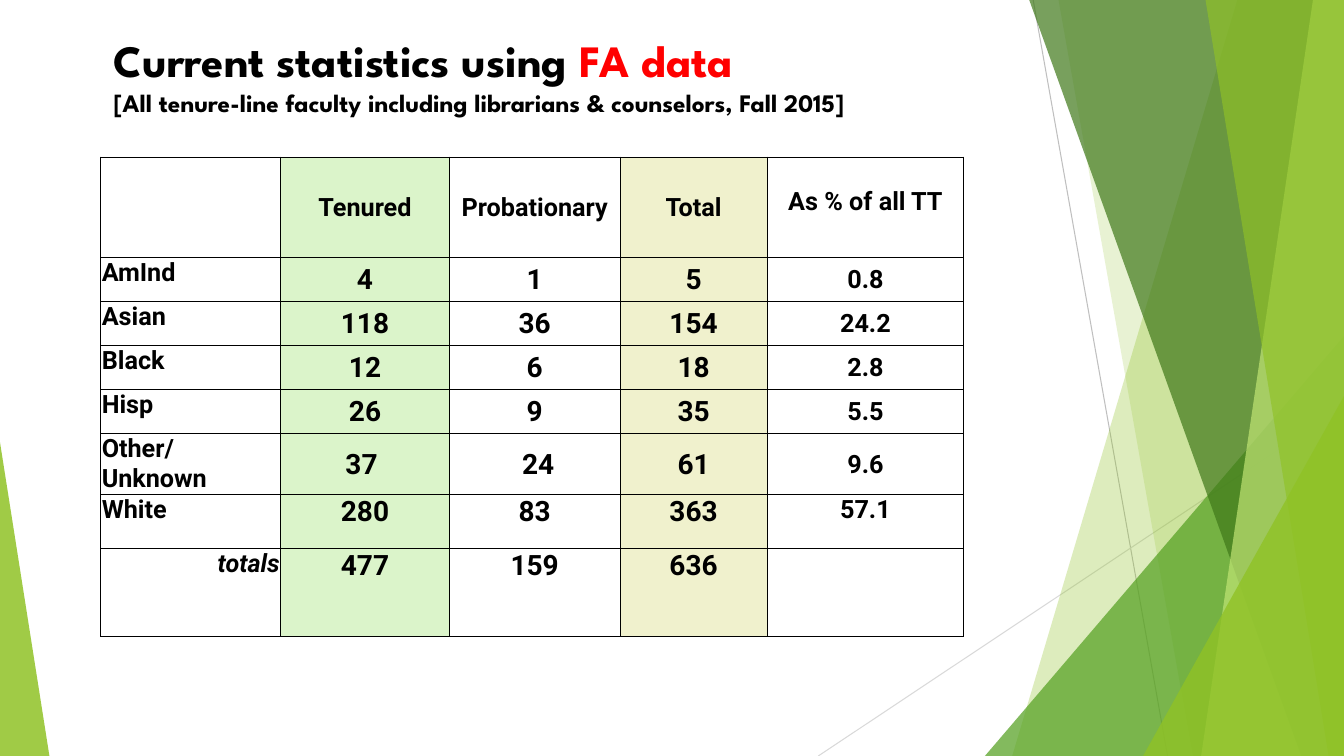
import pptx
import pptx.dml.color
import pptx.enum.shapes
import pptx.enum.text
import pptx.oxml
import pptx.oxml.ns
import pptx.util

Pt = pptx.util.Pt
RGBColor = pptx.dml.color.RGBColor
PP_ALIGN = pptx.enum.text.PP_ALIGN
ANCHOR = pptx.enum.text.MSO_ANCHOR
qn = pptx.oxml.ns.qn

BLACK = RGBColor(0x00, 0x00, 0x00)
RED = RGBColor(0xFF, 0x00, 0x00)
LIME = RGBColor(0x90, 0xC2, 0x26)
PALE_LIME = RGBColor(0xC0, 0xE4, 0x74)
GREEN = RGBColor(0x54, 0xA0, 0x21)
DARK_GREEN = RGBColor(0x3F, 0x78, 0x19)
GREY = RGBColor(0xBF, 0xBF, 0xBF)
LIGHT_GREY = RGBColor(0xD9, 0xD9, 0xD9)
TENURED_FILL = RGBColor(0xDB, 0xF4, 0xCA)
TOTAL_FILL = RGBColor(0xF0, 0xF1, 0xCD)

SLIDE_WIDTH, SLIDE_HEIGHT = 960, 540
COLUMN_WIDTHS = [128.5, 120.5, 122, 105, 140.5]
ROW_HEIGHTS = [71.5] + [31.5] * 4 + [43.5, 38.5, 63]
COLUMN_FILLS = {1: TENURED_FILL, 3: TOTAL_FILL}
STATISTICS = [
    ["", "Tenured", "Probationary", "Total", "As % of all TT"],
    ["AmInd", "4", "1", "5", "0.8"],
    ["Asian", "118", "36", "154", "24.2"],
    ["Black", "12", "6", "18", "2.8"],
    ["Hisp", "26", "9", "35", "5.5"],
    ["Other/\nUnknown", "37 ", " 24", "61", "9.6"],
    ["White", "280", "83", "363", "57.1"],
    ["totals", "477", "159", "636", ""],
]


def style_run(run, font, size, color=BLACK):
    """Give a run its bold typeface, size and colour."""
    run.font.name = font
    run.font.size = Pt(size)
    run.font.bold = True
    run.font.color.rgb = color


def paint(shape, color, opacity):
    """Fill a facet with a translucent colour and no outline."""
    shape.shadow.inherit = False
    shape.fill.solid()
    shape.fill.fore_color.rgb = color
    shape.line.fill.background()
    tint = shape._element.spPr.find(".//" + qn("a:srgbClr"))
    pptx.oxml.ns.nsdecls("a")
    alpha = tint.makeelement(qn("a:alpha"), {"val": str(opacity * 1000)})
    tint.append(alpha)


def add_ray(slide, start, end, color):
    """Draw a thin line across the background."""
    ray = slide.shapes.add_connector(
        pptx.enum.shapes.MSO_CONNECTOR.STRAIGHT, *map(Pt, start + end))
    ray.line.color.rgb = color
    ray.line.width = Pt(0.75)
    properties = ray._element.spPr
    properties.append(properties.makeelement(qn("a:effectLst"), {}))


def add_band(slide, top_left, bottom_left, color, opacity):
    """Draw a full-height facet reaching the right edge of the slide."""
    builder = slide.shapes.build_freeform(Pt(top_left), Pt(-0.6))
    builder.add_line_segments([
        (Pt(SLIDE_WIDTH), Pt(-0.6)),
        (Pt(SLIDE_WIDTH), Pt(SLIDE_HEIGHT)),
        (Pt(bottom_left), Pt(SLIDE_HEIGHT)),
    ])
    paint(builder.convert_to_shape(), color, opacity)


def add_corner(slide, left, top, width, apex, color, opacity):
    """Draw a triangle standing on the bottom edge of the slide."""
    corner = slide.shapes.add_shape(
        pptx.enum.shapes.MSO_SHAPE.ISOSCELES_TRIANGLE,
        Pt(left), Pt(top), Pt(width), Pt(SLIDE_HEIGHT - top))
    corner.adjustments[0] = apex
    paint(corner, color, opacity)


def add_facets(slide):
    """Build the green background facets from back to front."""
    add_ray(slide, (738, 0), (834, 540), GREY)
    add_ray(slide, (960, 290), (584.5, 540), LIGHT_GREY)
    add_band(slide, 884, 723, LIME, 30)
    add_band(slide, 756, 852, LIME, 20)
    add_corner(slide, 703.5, 240, 256.5, 1, GREEN, 72)
    add_band(slide, 735, 929.5, DARK_GREEN, 70)
    add_band(slide, 938, 858, PALE_LIME, 70)
    add_band(slide, 861, 949, LIME, 65)
    add_corner(slide, 816.5, 283, 143.5, 1, LIME, 80)
    add_corner(slide, 0, 316, 35.3, 0, LIME, 85)


def add_heading(slide, left, top, width, height):
    """Fill the title placeholder with the heading and its scope."""
    heading = slide.shapes.title
    heading.left, heading.top = Pt(left), Pt(top)
    heading.width, heading.height = Pt(width), Pt(height)
    frame = heading.text_frame
    frame.word_wrap = True
    frame.vertical_anchor = ANCHOR.BOTTOM
    frame.margin_left = frame.margin_right = Pt(7.2)
    frame.margin_top, frame.margin_bottom = 0, Pt(43)
    line = frame.paragraphs[0]
    line.alignment = PP_ALIGN.LEFT
    line.text = "Current statistics using "
    style_run(line.runs[0], "League Spartan", 32)
    source = line.add_run()
    source.text = "FA data"
    style_run(source, "League Spartan", 32, RED)
    line.add_line_break()
    scope = line.add_run()
    scope.text = "[All tenure-line faculty including librarians & counselors, Fall 2015]"
    style_run(scope, "League Spartan", 18)


def add_borders(cell):
    """Outline a cell with thin black rules."""
    for side in ("lnL", "lnR", "lnT", "lnB"):
        cell._tc.get_or_add_tcPr().append(pptx.oxml.parse_xml(
            f'<a:{side} {pptx.oxml.ns.nsdecls("a")} w="12700"><a:solidFill>'
            f'<a:srgbClr val="{BLACK}"/></a:solidFill></a:{side}>'))


def fill_cell(cell, row, column, value):
    """Write and format one cell of the statistics."""
    last_row, last_column = len(ROW_HEIGHTS) - 1, len(COLUMN_WIDTHS) - 1
    percent_heading = row == 0 and column == last_column
    add_borders(cell)
    if column in COLUMN_FILLS:
        cell.fill.solid()
        cell.fill.fore_color.rgb = COLUMN_FILLS[column]
    else:
        cell.fill.background()
    cell.margin_left = cell.margin_right = Pt(0.7)
    cell.margin_top = Pt(21.5 if percent_heading else 0.7)
    cell.margin_bottom = 0
    at_top = column == 0 or row >= last_row - 1 or percent_heading
    cell.vertical_anchor = ANCHOR.TOP if at_top else ANCHOR.MIDDLE
    cell.text_frame.text = value
    size = 20 if row > 0 and 0 < column < last_column else 18
    for line in cell.text_frame.paragraphs:
        line.alignment = PP_ALIGN.CENTER if column else PP_ALIGN.LEFT
        if column == 0 and row == last_row:
            line.alignment = PP_ALIGN.RIGHT
        for run in line.runs:
            style_run(run, "Roboto", size)
            run.font.italic = column == 0 and row == last_row


def add_statistics(slide, left, top):
    """Build the table of faculty counts and shares."""
    frame = slide.shapes.add_table(
        len(ROW_HEIGHTS), len(COLUMN_WIDTHS), Pt(left), Pt(top),
        Pt(sum(COLUMN_WIDTHS)), Pt(sum(ROW_HEIGHTS)))
    statistics = frame.table
    statistics.first_row = statistics.horz_banding = False
    for column, width in zip(statistics.columns, COLUMN_WIDTHS):
        column.width = Pt(width)
    for row, height in zip(statistics.rows, ROW_HEIGHTS):
        row.height = Pt(height)
    for row, values in enumerate(STATISTICS):
        for column, value in enumerate(values):
            fill_cell(statistics.cell(row, column), row, column, value)


def main():
    """Build and save the statistics slide."""
    deck = pptx.Presentation()
    deck.slide_width, deck.slide_height = Pt(SLIDE_WIDTH), Pt(SLIDE_HEIGHT)
    slide = deck.slides.add_slide(deck.slide_layouts[5])
    add_facets(slide)
    add_heading(slide, 74, 36.7, 820, 90)
    add_statistics(slide, 72, 112.3)
    deck.save("out.pptx")


if __name__ == "__main__":
    main()
